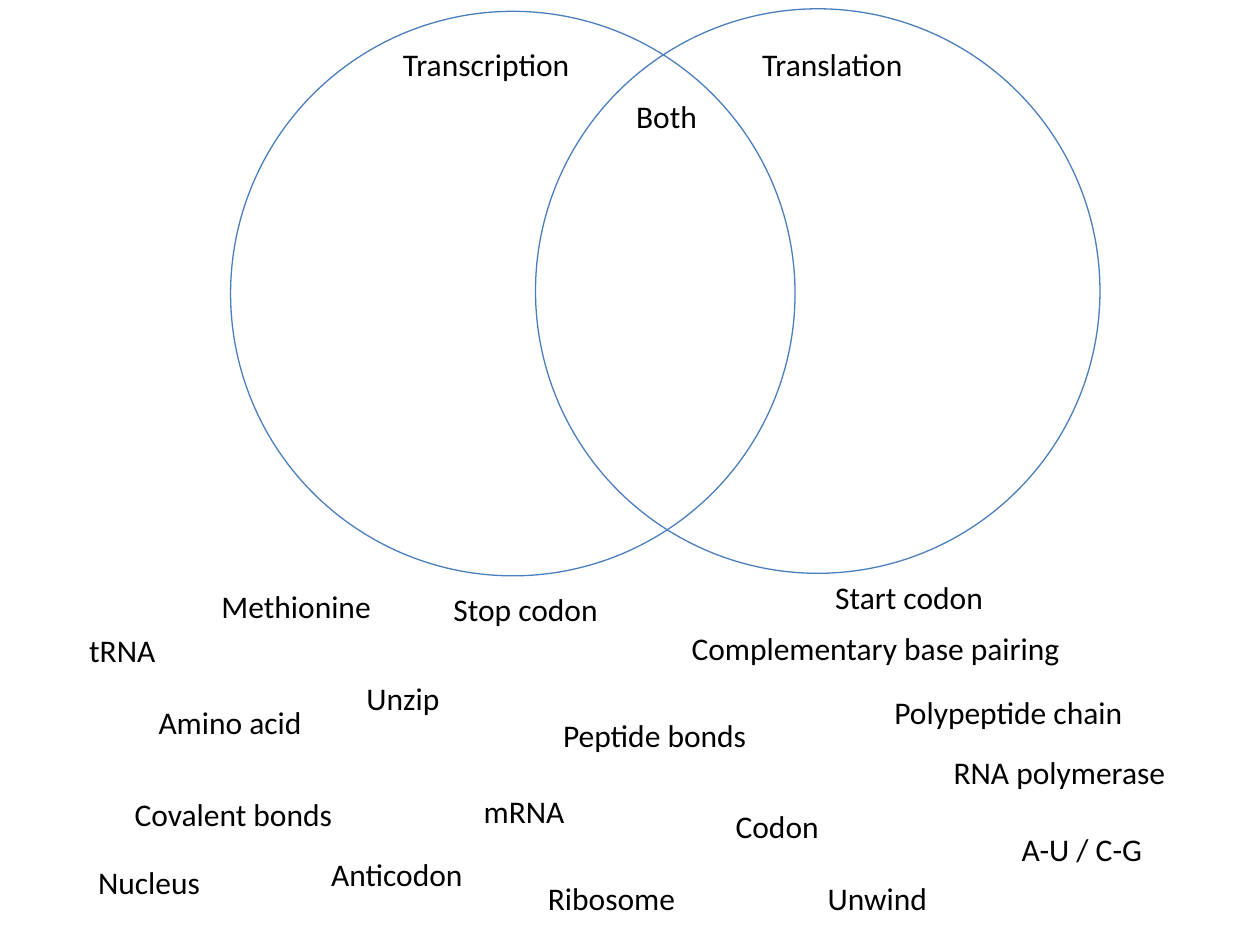
from pptx import Presentation
from pptx.dml.color import RGBColor
from pptx.enum.shapes import MSO_SHAPE
from pptx.enum.text import MSO_AUTO_SIZE
from pptx.util import Inches, Pt

OVAL = MSO_SHAPE.OVAL
GROW = MSO_AUTO_SIZE.SHAPE_TO_FIT_TEXT
COLORS = {"text": "000000", "circle": "4B7EBC"}
FONT = {"name": "Calibri", "size": Pt(18)}
LABEL_HEIGHT = 0.4
DIAMETER = 4.48

TERMS = [
    ("RNA polymerase", 7.47, 5.93, 1.9),
    ("Unwind", 6.47, 6.93, 1),
    ("Unzip", 2.81, 5.34, 0.79),
    ("Codon", 5.74, 6.36, 0.87),
    ("Anticodon", 2.53, 6.74, 1.26),
    ("Complementary base pairing", 5.39, 4.94, 3.16),
    ("A-U / C-G", 8.01, 6.54, 1.17),
    ("mRNA", 3.74, 6.24, 0.85),
    ("Covalent bonds", 0.97, 6.26, 1.79),
    ("Nucleus", 0.68, 6.8, 1.02),
    ("Ribosome", 4.25, 6.93, 1.22),
    ("tRNA", 0.61, 4.96, 0.73),
    ("Amino acid", 1.16, 5.53, 1.35),
    ("Peptide bonds", 4.37, 5.63, 1.68),
    ("Polypeptide chain", 7, 5.45, 2.03),
    ("Stop codon", 3.5, 4.63, 1.36),
    ("Start codon", 6.53, 4.54, 1.39),
    ("Methionine", 1.66, 4.61, 1.4),
]
CIRCLES = [(4.25, 0.07), (1.83, 0.09)]
HEADINGS = [
    ("Transcription", 3.1, 0.31, 1.54),
    ("Translation", 5.95, 0.31, 1.33),
    ("Both", 4.95, 0.72, 0.69),
]


def add_label(s, text, left, top, width):
    sp = s.shapes.add_textbox(*map(Inches, (left, top, width, LABEL_HEIGHT)))
    tf = sp.text_frame
    tf.word_wrap = False
    tf.auto_size = GROW
    r = tf.paragraphs[0].add_run()
    r.text = text
    for key, value in FONT.items():
        setattr(r.font, key, value)
    r.font.color.rgb = RGBColor.from_string(COLORS["text"])


def add_circle(s, left, top):
    sp = s.shapes.add_shape(OVAL, *map(Inches, (left, top, DIAMETER, DIAMETER)))
    sp.shadow.inherit = False
    sp.fill.background()
    sp.line.color.rgb = RGBColor.from_string(COLORS["circle"])
    sp.line.width = Pt(0.75)


def main():
    """Build a Venn diagram of transcription and translation with terms to sort."""
    prs = Presentation()
    prs.slide_width, prs.slide_height = Inches(10), Inches(7.5)
    s = prs.slides.add_slide(prs.slide_layouts[6])
    for term in TERMS:
        add_label(s, *term)
    for circle in CIRCLES:
        add_circle(s, *circle)
    for heading in HEADINGS:
        add_label(s, *heading)
    prs.save("out.pptx")


if __name__ == "__main__":
    main()
